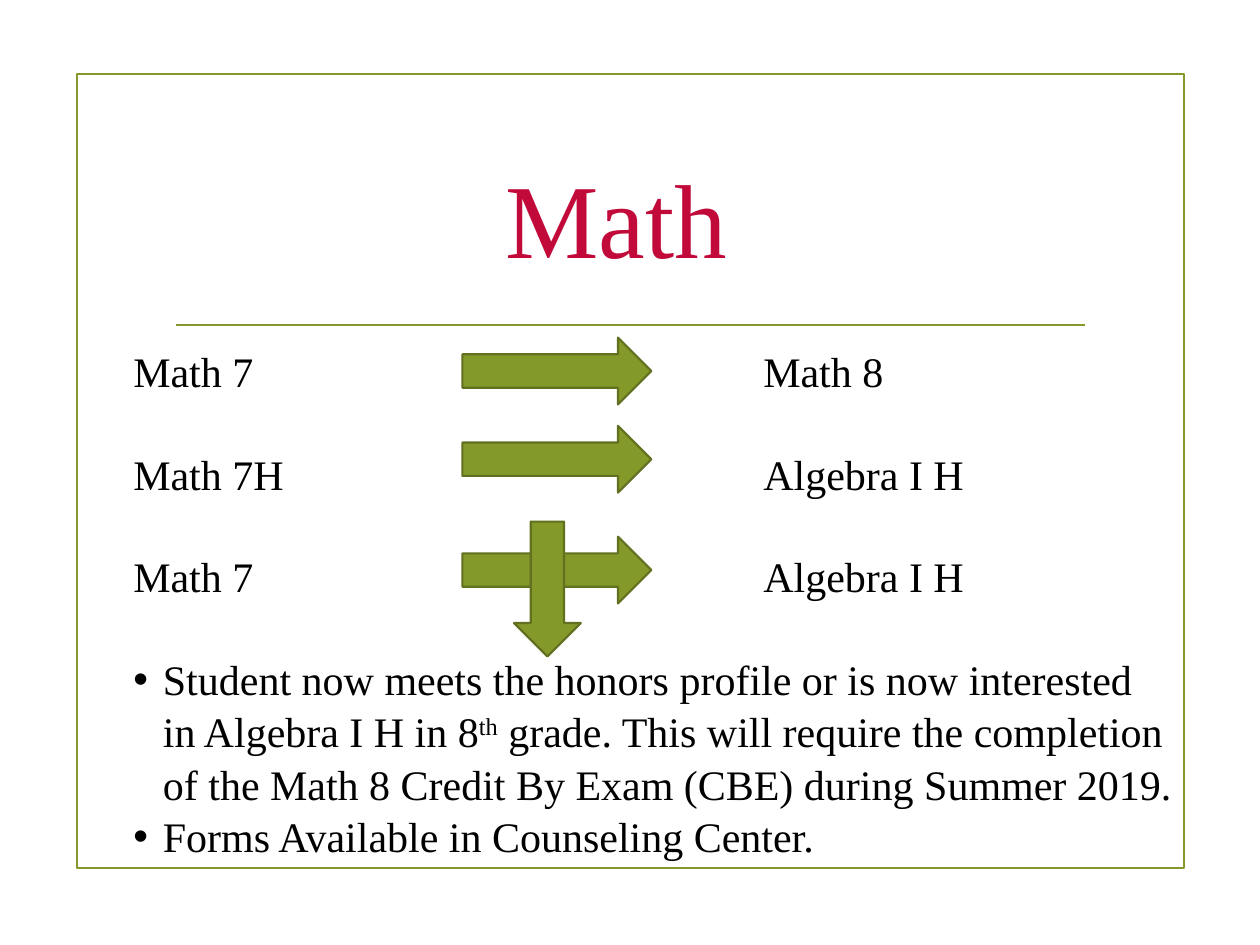
from dataclasses import dataclass

from lxml import etree
from pptx import Presentation, util as u
from pptx.dml.color import RGBColor
from pptx.enum import shapes, text
from pptx.oxml.ns import qn

COLUMNS, ROWS = 100, 75


@dataclass(frozen=True)
class Theme:
    font: str = "Times New Roman"
    title_size: float = 60
    body_size: float = 24
    line_width: float = 1.25
    line_spacing: float = 1.04
    row_gap: float = 28.7
    title: RGBColor = RGBColor(0xC2, 0x0A, 0x3A)
    body: RGBColor = RGBColor(0, 0, 0)
    green: RGBColor = RGBColor(0x83, 0x99, 0x2A)
    dark_green: RGBColor = RGBColor(0x61, 0x71, 0x1F)


@dataclass(frozen=True)
class Area:
    """A place on the slide, in grid columns and rows."""
    column: float
    row: float
    columns: float
    rows: float


@dataclass(frozen=True)
class Arrow:
    kind: shapes.MSO_SHAPE
    area: Area


@dataclass(frozen=True)
class Path:
    """The course a student takes now and the one that follows."""
    current: str
    following: str


THEME = Theme()
FRAME = Area(6.1, 5.9, 87.9, 63)
RULE = Area(14, 25.8, 72.1, 0)
TITLE = Area(11.7, 10, 74.4, 14.3)
BODY = Area(9.6, 26.8, 84.6, 41.4)
NEXT_COURSE_COLUMN = 50
BULLET_COLUMNS = 2.35

PATHS = [
    Path("Math 7", "Math 8"),
    Path("Math 7H", "Algebra I H"),
    Path("Math 7", "Algebra I H"),
]
# Each note is a list of (wording, is superscript).
NOTES = [
    [
        ("Student now meets the honors profile or is now interested "
         "in Algebra I H in 8", False),
        ("th", True),
        (" grade. This will require the completion of the Math 8 "
         "Credit By Exam (CBE) during Summer 2019.", False),
    ],
    [("Forms Available in Counseling Center.", False)],
]
ARROWS = [
    Arrow(shapes.MSO_SHAPE.RIGHT_ARROW, Area(36.7, row, 15, 5.3))
    for row in (26.8, 33.8, 42.6)
] + [Arrow(shapes.MSO_SHAPE.DOWN_ARROW, Area(40.8, 41.4, 5.3, 10.7))]


def across(columns: float) -> int:
    return round(u.Inches(10) * columns / COLUMNS)


def down(rows: float) -> int:
    return round(u.Inches(7.5) * rows / ROWS)


def place(area: Area) -> tuple:
    return (across(area.column), down(area.row),
            across(area.columns), down(area.rows))


def apply(target, values: dict) -> None:
    for name, value in values.items():
        setattr(target, name, value)


def set_line(line, color: RGBColor) -> None:
    line.color.rgb = color
    line.width = u.Pt(THEME.line_width)


def draw_frame(slide) -> None:
    frame = slide.shapes.add_shape(shapes.MSO_SHAPE.RECTANGLE, *place(FRAME))
    frame.shadow.inherit = False
    frame.fill.background()
    set_line(frame.line, THEME.green)


def draw_rule(slide) -> None:
    left, top, width, height = place(RULE)
    rule = slide.shapes.add_connector(
        shapes.MSO_CONNECTOR.STRAIGHT, left, top, left + width, top + height)
    set_line(rule.line, THEME.green)
    etree.SubElement(rule._element.spPr, qn("a:effectLst"))


def draw_arrow(slide, arrow: Arrow) -> None:
    shape = slide.shapes.add_shape(arrow.kind, *place(arrow.area))
    shape.shadow.inherit = False
    shape.fill.solid()
    shape.fill.fore_color.rgb = THEME.green
    set_line(shape.line, THEME.dark_green)


def add_frame(slide, area: Area, anchor: text.MSO_ANCHOR):
    frame = slide.shapes.add_textbox(*place(area)).text_frame
    apply(frame, {"word_wrap": True, "vertical_anchor": anchor})
    return frame


def add_run(paragraph, wording: str, size: float, color: RGBColor,
            superscript: bool = False) -> None:
    run = paragraph.add_run()
    run.text = wording
    apply(run.font, {"name": THEME.font, "size": u.Pt(size)})
    run.font.color.rgb = color
    if superscript:
        run.font._element.set("baseline", "30000")


def add_tab_stop(paragraph) -> None:
    stops = etree.SubElement(paragraph._p.get_or_add_pPr(), qn("a:tabLst"))
    etree.SubElement(stops, qn("a:tab"),
                     pos=str(across(NEXT_COURSE_COLUMN)), algn="l")


def add_bullet(paragraph) -> None:
    properties = paragraph._p.get_or_add_pPr()
    indent = across(BULLET_COLUMNS)
    properties.set("marL", str(indent))
    properties.set("indent", str(-indent))
    etree.SubElement(properties, qn("a:buFont"), typeface="Arial")
    etree.SubElement(properties, qn("a:buChar"), char="•")


def draw_title(slide) -> None:
    frame = add_frame(slide, TITLE, text.MSO_ANCHOR.MIDDLE)
    heading = frame.paragraphs[0]
    heading.alignment = text.PP_ALIGN.CENTER
    add_run(heading, "Math", THEME.title_size, THEME.title)


def draw_body(slide) -> None:
    frame = add_frame(slide, BODY, text.MSO_ANCHOR.TOP)
    entries = PATHS + NOTES
    for index, entry in enumerate(entries):
        paragraph = frame.add_paragraph() if index else frame.paragraphs[0]
        starts_group = 0 < index <= len(PATHS)
        apply(paragraph, {
            "line_spacing": THEME.line_spacing,
            "space_before": u.Pt(THEME.row_gap if starts_group else 0),
        })
        if isinstance(entry, Path):
            add_tab_stop(paragraph)
            pieces = [(f"{entry.current}\t{entry.following}", False)]
        else:
            add_bullet(paragraph)
            pieces = entry
        for wording, superscript in pieces:
            add_run(paragraph, wording, THEME.body_size, THEME.body,
                    superscript)


def main() -> None:
    deck = Presentation()
    apply(deck, {"slide_width": u.Inches(10), "slide_height": u.Inches(7.5)})
    slide = deck.slides.add_slide(deck.slide_layouts[6])
    draw_frame(slide)
    draw_rule(slide)
    draw_title(slide)
    draw_body(slide)
    for arrow in ARROWS:
        draw_arrow(slide, arrow)
    deck.save("out.pptx")


if __name__ == "__main__":
    main()
